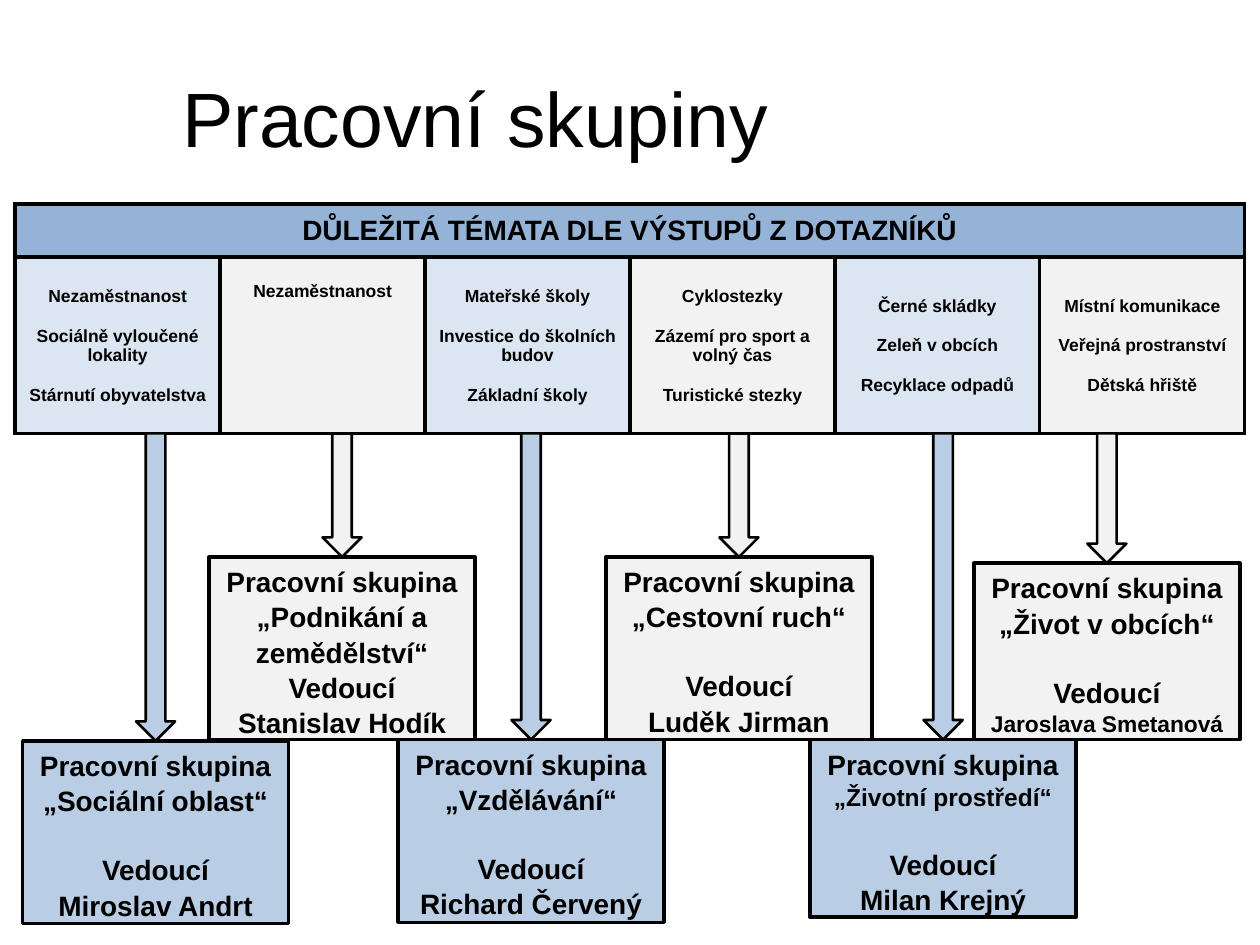
from lxml.etree import SubElement
from pptx import Presentation
from pptx.dml.color import RGBColor
from pptx.enum.shapes import MSO_SHAPE
from pptx.enum.text import MSO_ANCHOR, PP_ALIGN
from pptx.oxml.ns import qn
from pptx.util import Inches, Pt

COLORS = {"ink": "000000", "head": "95B3D7", "pale": "DCE6F2",
          "blue": "B9CDE5", "gray": "F2F2F2"}


class Deck:
    font = "Arial"

    def __init__(self):
        self.prs = Presentation()
        self.prs.slide_width = Inches(10)
        self.prs.slide_height = Inches(7.5)
        self.slide = self.prs.slides.add_slide(self.prs.slide_layouts[5])

    def color(self, name):
        return RGBColor.from_string(COLORS[name])

    def style(self, par, size, bold=True):
        par.alignment = PP_ALIGN.CENTER
        par.font.name = self.font
        par.font.size = Pt(size)
        par.font.bold = bold
        par.font.color.rgb = self.color("ink")

    def title(self, text, x, y, w, h):
        shape = self.slide.shapes.title
        shape.left, shape.top = Inches(x), Inches(y)
        shape.width, shape.height = Inches(w), Inches(h)
        shape.text_frame.text = text
        self.style(shape.text_frame.paragraphs[0], 44, False)

    def shape(self, kind, x, y, w, h, fill, line):
        shape = self.slide.shapes.add_shape(
            kind, Inches(x), Inches(y), Inches(w), Inches(h))
        shape.shadow.inherit = False
        shape.fill.solid()
        shape.fill.fore_color.rgb = self.color(fill)
        shape.line.color.rgb = self.color("ink")
        shape.line.width = Pt(line)
        return shape

    def arrow(self, mid, top, end, fill):
        wide = 0.31
        self.shape(MSO_SHAPE.DOWN_ARROW, mid - wide / 2, top, wide,
                   end - top, fill, 1.5)

    def box(self, x, y, w, h, fill, lines, sizes):
        frame = self.shape(MSO_SHAPE.RECTANGLE, x, y, w, h, fill, 2).text_frame
        frame.word_wrap = True
        frame.vertical_anchor = MSO_ANCHOR.TOP
        frame.text = "\n".join(lines)
        for par, size in zip(frame.paragraphs, sizes):
            self.style(par, size)
            par.line_spacing = 1.05
        return frame

    def cell(self, cell, lines, fill, size):
        cell.fill.solid()
        cell.fill.fore_color.rgb = self.color(fill)
        cell.vertical_anchor = MSO_ANCHOR.MIDDLE
        cell.margin_left = cell.margin_right = cell.margin_top = Inches(0.01)
        cell.margin_bottom = 0
        cell.text = "\n".join(lines)
        for i, par in enumerate(cell.text_frame.paragraphs):
            self.style(par, size)
            if i:
                par.space_before = Pt(11.5)

    def border(self, cell):
        props = cell._tc.get_or_add_tcPr()
        for i, side in enumerate(("lnL", "lnR", "lnT", "lnB")):
            line = props.makeelement(qn("a:" + side), {"w": str(Pt(2.25))})
            fill = SubElement(line, qn("a:solidFill"))
            SubElement(fill, qn("a:srgbClr"), val=COLORS["ink"])
            props.insert(i, line)

    def table(self, x, y, wide, rows, head, topics):
        count = len(topics)
        table = self.slide.shapes.add_table(
            2, count, Inches(x), Inches(y), Inches(wide),
            Inches(sum(rows))).table
        for row, high in zip(table.rows, rows):
            row.height = Inches(high)
        table.cell(0, 0).merge(table.cell(0, count - 1))
        self.cell(table.cell(0, 0), [head], "head", 16)
        for i, lines in enumerate(topics):
            cell = table.cell(1, i)
            self.cell(cell, lines, ("pale", "gray")[i % 2], 10)
            if len(lines) == 1:
                cell.vertical_anchor = MSO_ANCHOR.TOP
                cell.margin_top = Inches(0.2)
        for cell in table.iter_cells():
            self.border(cell)


TOPICS = [
    ["Nezaměstnanost", "Sociálně vyloučené lokality", "Stárnutí obyvatelstva"],
    ["Nezaměstnanost"],
    ["Mateřské školy", "Investice do školních budov", "Základní školy"],
    ["Cyklostezky", "Zázemí pro sport a volný čas", "Turistické stezky"],
    ["Černé skládky", "Zeleň v obcích", "Recyklace odpadů"],
    ["Místní komunikace", "Veřejná prostranství", "Dětská hřiště"],
]

# Left, top, height, fill, group, its size, leader, its size, gap before leader
GROUPS = [
    (0.18, 5.88, 1.45, "blue", "Sociální oblast", 16, "Miroslav Andrt", 16, 19.3),
    (3.16, 5.87, 1.45, "blue", "Vzdělávání", 16, "Richard Červený", 16, 19.3),
    (4.81, 4.42, 1.45, "gray", "Cestovní ruch", 16, "Luděk Jirman", 16, 19.3),
    (6.43, 5.87, 1.41, "blue", "Životní prostředí", 14, "Milan Krejný", 16, 19.3),
    (7.73, 4.47, 1.4, "gray", "Život v obcích", 16, "Jaroslava Smetanová", 13, 19.3),
    (1.66, 4.42, 1.45, "gray", "Podnikání a zemědělství", 16, "Stanislav Hodík", 16, 0),
]
WIDE = 2.11


def main():
    deck = Deck()
    deck.title("Pracovní skupiny", 0.5, 0.3, 6.55, 1.25)

    # Survey topics
    deck.table(0.12, 1.62, 9.76, (0.42, 1.4),
               "DŮLEŽITÁ TÉMATA DLE VÝSTUPŮ Z DOTAZNÍKŮ", TOPICS)

    # Arrows from the topics to the groups
    for x, y, _, fill, *_ in GROUPS:
        deck.arrow(x + WIDE / 2, 3.44, y, fill)

    # Working groups and their leaders
    for x, y, high, fill, group, size, head, small, gap in GROUPS:
        lines = ["Pracovní skupina", f"„{group}“", "Vedoucí", head]
        frame = deck.box(x, y, WIDE, high, fill, lines, (16, size, 16, small))
        frame.paragraphs[2].space_before = Pt(gap)

    deck.prs.save("out.pptx")


if __name__ == "__main__":
    main()
